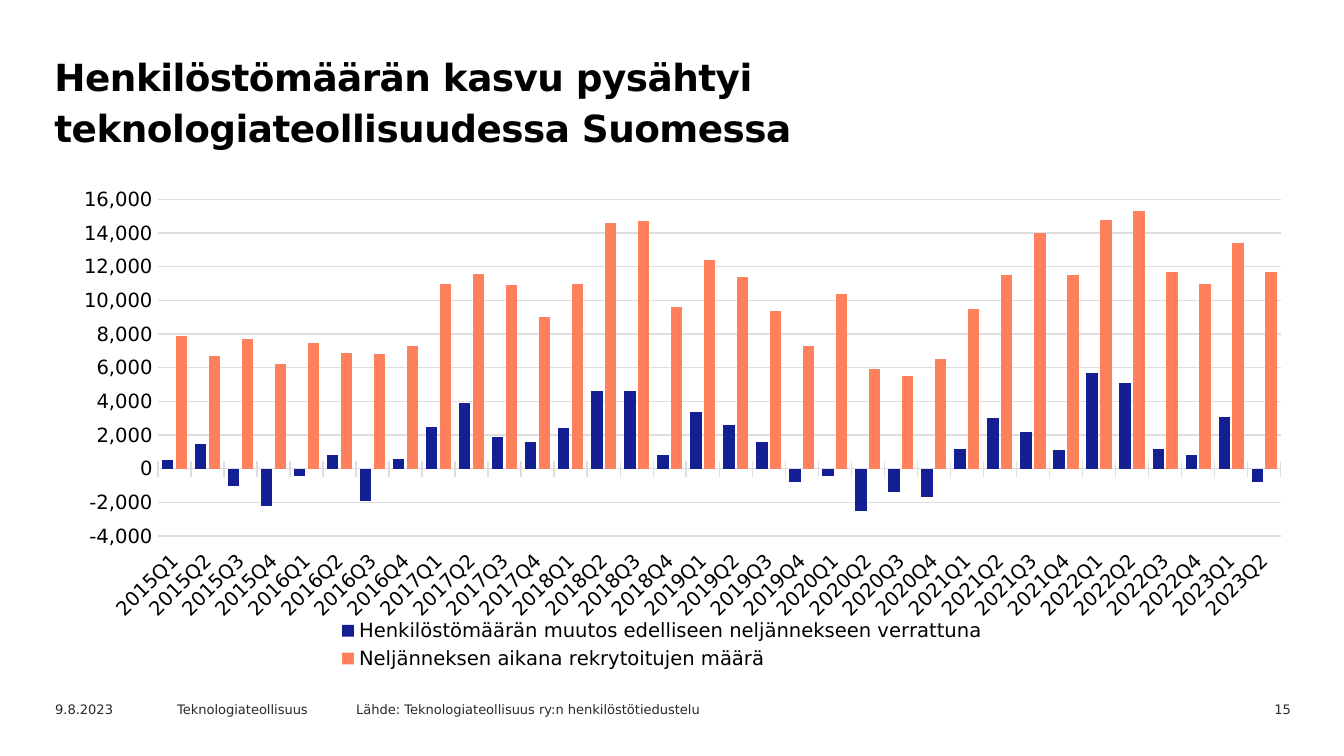
from lxml import etree
from pptx import Presentation
from pptx.chart.data import CategoryChartData
from pptx.dml.color import RGBColor
from pptx.enum.chart import (XL_CHART_TYPE, XL_LEGEND_POSITION, XL_TICK_LABEL_POSITION,
                             XL_TICK_MARK)
from pptx.enum.text import MSO_ANCHOR, MSO_AUTO_SIZE, PP_ALIGN
from pptx.oxml.ns import qn
from pptx.util import Pt

COLUMNS = XL_CHART_TYPE.COLUMN_CLUSTERED
BOTTOM = XL_LEGEND_POSITION.BOTTOM
LOW = XL_TICK_LABEL_POSITION.LOW
NO_TICK, CROSS = XL_TICK_MARK.NONE, XL_TICK_MARK.CROSS
TOP, NO_FIT = MSO_ANCHOR.TOP, MSO_AUTO_SIZE.NONE
LEFT, RIGHT = PP_ALIGN.LEFT, PP_ALIGN.RIGHT

FONT = "DejaVu Sans"
BLACK = RGBColor(0x00, 0x00, 0x00)
DARK = RGBColor(0x29, 0x28, 0x2E)
GRID = RGBColor(0xDE, 0xDD, 0xE1)
NAVY = RGBColor(0x14, 0x1F, 0x94)
CORAL = RGBColor(0xFF, 0x80, 0x5C)

# Content
TITLE = "Henkilöstömäärän kasvu pysähtyi teknologiateollisuudessa Suomessa"
FOOTER = [  # text, left, width, alignment
    ("9.8.2023", 42, 134, LEFT),
    ("Teknologiateollisuus", 164, 191, LEFT),
    ("Lähde: Teknologiateollisuus ry:n henkilöstötiedustelu", 343, 437, LEFT),
    ("15", 1177, 127, RIGHT),
]
QUARTERS = [f"{year}Q{q}" for year in range(2015, 2024) for q in range(1, 5)][:34]
SERIES = [
    ("Henkilöstömäärän muutos edelliseen neljännekseen verrattuna", NAVY,
     [500, 1500, -1000, -2200, -400, 800, -1900, 600, 2500, 3900, 1900, 1600,
      2400, 4600, 4600, 800, 3400, 2600, 1600, -800, -400, -2500, -1400, -1700,
      1200, 3000, 2200, 1100, 5700, 5100, 1200, 800, 3100, -800]),
    ("Neljänneksen aikana rekrytoitujen määrä", CORAL,
     [7900, 6700, 7700, 6200, 7500, 6900, 6800, 7300, 11000, 11600, 10900, 9000,
      11000, 14600, 14700, 9600, 12400, 11400, 9400, 7300, 10400, 5900, 5500, 6500,
      9500, 11500, 14000, 11500, 14800, 15300, 11700, 11000, 13400, 11700]),
]
PLOT_AREA = {"x": 0.1, "y": 0.06, "w": 0.9, "h": 0.66}
PLOT_AREA = {"x": 0.096, "y": 0.064, "w": 0.899, "h": 0.663}


def px(n):
    return round(n * 914400 / 134.4)


def set_font(font, size, color, bold=False):
    font.name, font.size, font.bold = FONT, Pt(size), bold
    font.color.rgb = color


def set_plot_area(chart, fractions):
    area = chart._chartSpace.chart.plotArea
    for old in area.findall(qn("c:layout")):
        area.remove(old)
    layout = etree.Element(qn("c:layout"))
    manual = etree.SubElement(layout, qn("c:manualLayout"))
    settings = {"layoutTarget": "inner", "xMode": "edge", "yMode": "edge", **fractions}
    for tag, value in settings.items():
        etree.SubElement(manual, qn(f"c:{tag}")).set("val", str(value))
    area.insert(0, layout)


prs = Presentation()
prs.slide_width, prs.slide_height = px(1344), px(756)
s = prs.slides.add_slide(prs.slide_layouts[5])

# Title
title = s.shapes.title
title.left, title.top, title.width, title.height = px(38), px(42), px(1175), px(95)
tf = title.text_frame
tf.text = TITLE
tf.word_wrap, tf.auto_size, tf.vertical_anchor = True, NO_FIT, TOP
p = tf.paragraphs[0]
p.alignment, p.line_spacing = LEFT, Pt(27)
p._p.get_or_add_pPr().set("marL", str(px(3)))
set_font(p.font, 20, BLACK, bold=True)
p.runs[0]._r.get_or_add_rPr().set("spc", "-30")

# Chart
data = CategoryChartData(number_format="#,##0")
data.categories = QUARTERS
for name, _, values in SERIES:
    data.add_series(name, values)
chart = s.shapes.add_chart(COLUMNS, px(38), px(167), px(1249), px(508), data).chart
set_font(chart.font, 10, DARK)
chart.has_title = False
chart.has_legend = True
chart.legend.position = BOTTOM
chart.legend.include_in_layout = False
set_font(chart.legend.font, 10.5, BLACK)
set_plot_area(chart, PLOT_AREA)

plot = chart.plots[0]
plot.gap_width, plot.overlap, plot.vary_by_categories = 70, -21, False
for series, (_, color, _) in zip(plot.series, SERIES):
    series.invert_if_negative = False
    series.format.fill.solid()
    series.format.fill.fore_color.rgb = color

# Axes
cat, val = chart.category_axis, chart.value_axis
for axis in (cat, val):
    set_font(axis.tick_labels.font, 10.5, BLACK)
    axis.minor_tick_mark = NO_TICK
cat.tick_label_position = LOW
cat.major_tick_mark = CROSS
cat._element.find(qn("c:txPr")).find(qn("a:bodyPr")).set("rot", "-2700000")
val.minimum_scale, val.maximum_scale, val.major_unit = -4000, 16000, 2000
val.major_tick_mark = NO_TICK
val.tick_labels.number_format = "#,##0"
val.tick_labels.number_format_is_linked = False
val.format.line.fill.background()
for line in (cat.format.line, val.major_gridlines.format.line):
    line.color.rgb, line.width = GRID, Pt(0.75)

# Footer
for text, left, width, alignment in FOOTER:
    tf = s.shapes.add_textbox(px(left), px(695), px(width), px(24)).text_frame
    tf.text = text
    tf.word_wrap = True
    p = tf.paragraphs[0]
    p.alignment = alignment
    set_font(p.font, 7, DARK)

prs.save("out.pptx")
